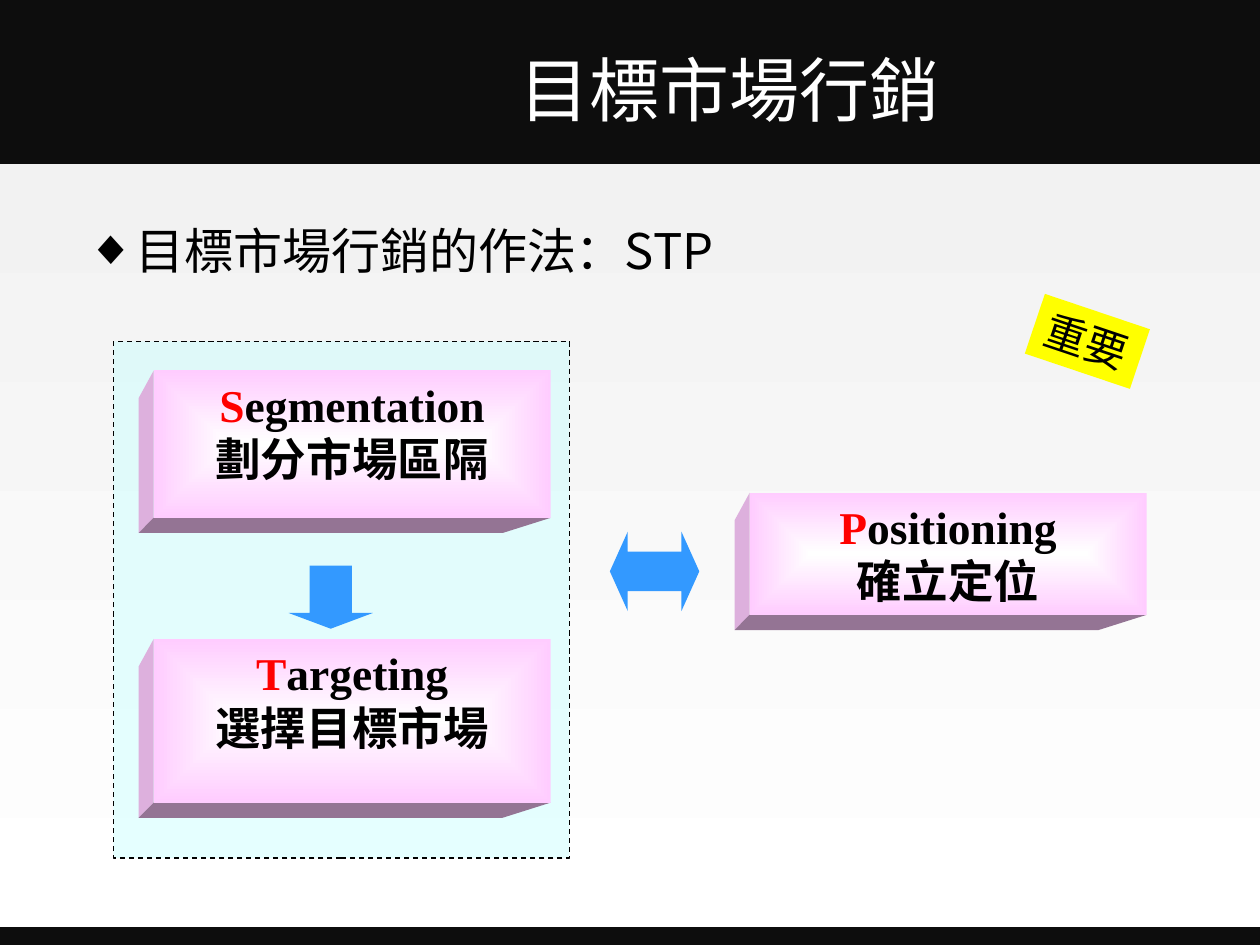
from dataclasses import dataclass

import pptx
import pptx.dml.color
import pptx.enum.dml
import pptx.enum.shapes
import pptx.enum.text
import pptx.oxml
import pptx.oxml.ns
import pptx.util

Inches = pptx.util.Inches
Pt = pptx.util.Pt
SHAPE = pptx.enum.shapes.MSO_SHAPE
ALIGN = pptx.enum.text.PP_ALIGN
ANCHOR = pptx.enum.text.MSO_ANCHOR
CJK = "Noto Sans CJK SC"
DEPTH = 0.12


@dataclass
class Area:
    left: float
    top: float
    width: float
    height: float

    def lengths(self) -> list:
        return [Inches(v) for v in (self.left, self.top, self.width, self.height)]


@dataclass
class Step:
    area: Area
    initial: str
    rest: str
    chinese: str


STEPS = [
    Step(Area(5.95, 3.91, 3.15, 0.97), "P", "ositioning", "確立定位"),
    Step(Area(1.22, 5.07, 3.15, 1.3), "T", "argeting", "選擇目標市場"),
    Step(Area(1.22, 2.94, 3.15, 1.17), "S", "egmentation", "劃分市場區隔"),
]


def rgb(value: str):
    return pptx.dml.color.RGBColor.from_string(value)


def paint(shape, color: str) -> None:
    shape.shadow.inherit = False
    shape.fill.solid()
    shape.fill.fore_color.rgb = rgb(color)
    shape.line.fill.background()


def add_shape(slide, kind, area: Area, color: str):
    shape = slide.shapes.add_shape(kind, *area.lengths())
    paint(shape, color)
    return shape


def blend(shape, start: str, end: str) -> None:
    """Fill with a gradient running from top to bottom."""
    shape.fill.gradient()
    shape.fill.gradient_angle = 270
    for stop, color, position in zip(shape.fill.gradient_stops, (start, end), (0, 1)):
        stop.color.rgb = rgb(color)
        stop.position = position


def blend_from_centre(shape, start: str, end: str) -> None:
    blend(shape, start, end)
    linear = shape._element.spPr.find(".//" + pptx.oxml.ns.qn("a:lin"))
    linear.getparent().replace(linear, pptx.oxml.parse_xml(
        f'<a:path {pptx.oxml.ns.nsdecls("a")} path="shape">'
        '<a:fillToRect l="50000" t="50000" r="50000" b="50000"/></a:path>'))


def add_run(paragraph, text: str, font: str, size: float, color: str, bold=False) -> None:
    run = paragraph.add_run()
    run.text = text
    run.font.name = font
    run.font.size = Pt(size)
    run.font.bold = bold
    run.font.color.rgb = rgb(color)
    if font == CJK:
        east_asian = pptx.oxml.parse_xml(
            f'<a:ea {pptx.oxml.ns.nsdecls("a")} typeface="{CJK}"/>')
        run.font._element.find(pptx.oxml.ns.qn("a:latin")).addnext(east_asian)


def add_side(slide, corners: list, color: str) -> None:
    points = [(Inches(x), Inches(y)) for x, y in corners]
    builder = slide.shapes.build_freeform(*points[0])
    builder.add_line_segments(points[1:], close=True)
    paint(builder.convert_to_shape(), color)


def add_step(slide, step: Step) -> None:
    """Draw a block with a front face and two visible sides."""
    left, top = step.area.left, step.area.top
    right, bottom = left + step.area.width, top + step.area.height
    low_corner = (left - DEPTH, bottom + DEPTH)
    add_side(slide, [(left, top), (left - DEPTH, top + 0.22), low_corner, (left, bottom)],
             "DDB0DD")
    add_side(slide, [(left, bottom), low_corner, (right - 0.38, bottom + DEPTH),
                     (right, bottom)], "947494")
    face = add_shape(slide, SHAPE.RECTANGLE, step.area, "FFCCFF")
    blend_from_centre(face, "FFFFFF", "FFCCFF")
    frame = face.text_frame
    frame.word_wrap = True
    frame.vertical_anchor = ANCHOR.TOP
    english, chinese = frame.paragraphs[0], frame.add_paragraph()
    english.alignment = chinese.alignment = ALIGN.CENTER
    for paragraph, text, color in ((english, step.initial, "FF0000"),
                                   (english, step.rest, "000000"),
                                   (chinese, step.chinese, "000000")):
        add_run(paragraph, text, "Times New Roman", 26, color, bold=True)


def place(placeholder, area: Area):
    """Move a placeholder and return its first paragraph."""
    placeholder.left, placeholder.top, placeholder.width, placeholder.height = area.lengths()
    return placeholder.text_frame.paragraphs[0]


def add_backdrop(slide) -> None:
    slide.background.fill.solid()
    slide.background.fill.fore_color.rgb = rgb("0D0D0D")
    panel = add_shape(slide, SHAPE.RECTANGLE, Area(0, 1.3, 10, 6.06), "FFFFFF")
    blend(panel, "F2F2F2", "FFFFFF")
    slide.shapes._spTree.insert(2, panel._element)


def add_headings(slide) -> None:
    title, body = slide.shapes.title, slide.placeholders[1]
    heading = place(title, Area(1.83, 0.12, 7.92, 1.16))
    title.text_frame.vertical_anchor = ANCHOR.MIDDLE
    heading.alignment = ALIGN.CENTER
    add_run(heading, "目標市場行銷", CJK, 40, "FFFFFF")

    method = place(body, Area(0.59, 1.7, 8.82, 0.79))
    properties = method._p.get_or_add_pPr()
    properties.set("marL", str(Inches(0.38)))
    properties.set("indent", str(-Inches(0.38)))
    properties.append(pptx.oxml.parse_xml(
        f'<a:buChar {pptx.oxml.ns.nsdecls("a")} char="◆"/>'))
    method.space_before = Pt(0)
    add_run(method, "目標市場行銷的作法：STP", CJK, 28, "000000")


def add_group_frame(slide) -> None:
    group = add_shape(slide, SHAPE.RECTANGLE, Area(0.9, 2.71, 3.62, 4.1), "CCFFFF")
    tint = group._element.spPr.find(".//" + pptx.oxml.ns.qn("a:srgbClr"))
    tint.append(pptx.oxml.parse_xml(
        f'<a:alpha {pptx.oxml.ns.nsdecls("a")} val="51000"/>'))
    group.line.color.rgb = rgb("000000")
    group.line.width = Pt(0.75)
    group.line.dash_style = pptx.enum.dml.MSO_LINE.DASH


def add_arrows(slide) -> None:
    for kind, area, head in ((SHAPE.DOWN_ARROW, Area(2.29, 4.49, 0.67, 0.5), 0.25),
                             (SHAPE.LEFT_RIGHT_ARROW, Area(4.84, 4.22, 0.71, 0.63), 0.225)):
        arrow = add_shape(slide, kind, area, "3399FF")
        arrow.adjustments[0] = 0.5
        arrow.adjustments[1] = head


def add_important_note(slide) -> None:
    note = add_shape(slide, SHAPE.RECTANGLE, Area(8.19, 2.46, 0.88, 0.5), "FFFF00")
    note.rotation = 18.6
    note.text_frame.word_wrap = False
    note.text_frame.vertical_anchor = ANCHOR.TOP
    label = note.text_frame.paragraphs[0]
    label.alignment = ALIGN.LEFT
    add_run(label, "重要", "Arial", 24, "000000")


def main() -> None:
    deck = pptx.Presentation()
    deck.slide_width, deck.slide_height = Inches(10), Inches(7.5)
    slide = deck.slides.add_slide(deck.slide_layouts[1])
    add_backdrop(slide)
    add_headings(slide)
    add_group_frame(slide)
    for step in STEPS:
        add_step(slide, step)
    add_arrows(slide)
    add_important_note(slide)
    deck.save("out.pptx")


if __name__ == "__main__":
    main()
